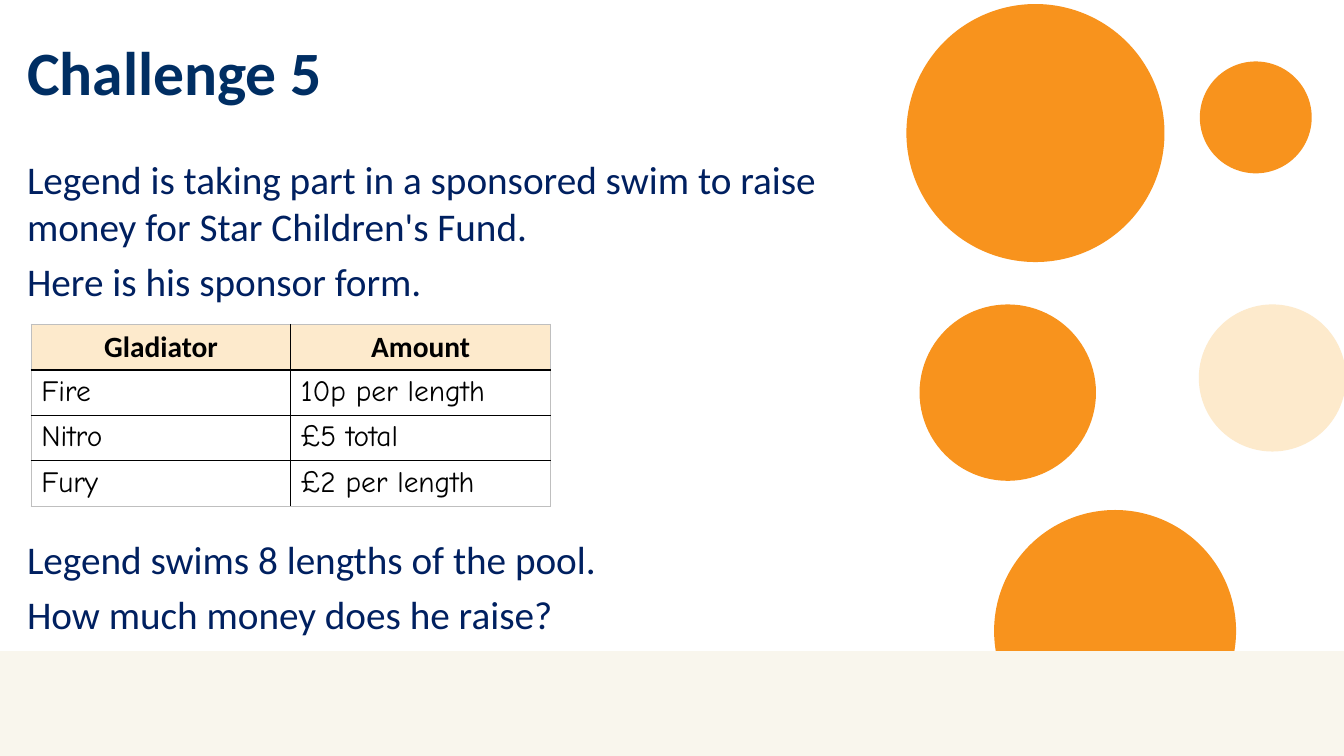
from lxml import etree
from pptx import Presentation
from pptx.dml.color import RGBColor
from pptx.enum import shapes, text
from pptx.oxml import ns
from pptx.util import Inches, Pt

# Content
TITLE = "Challenge 5"
INTRO = ["Legend is taking part in a sponsored swim to raise \vmoney for Star Children's Fund.",
         "Here is his sponsor form."]
QUESTION = ["Legend swims 8 lengths of the pool.", "How much money does he raise?"]
SPONSORS = [("Gladiator", "Amount"),
            ("Fire", "10p per length"),
            ("Nitro", "£5 total"),
            ("Fury", "£2 per length")]

# Colours
ORANGE = RGBColor(0xF8, 0x93, 0x1D)
PEACH = RGBColor(0xFD, 0xEA, 0xCC)
CREAM = RGBColor(0xF9, 0xF6, 0xED)
NAVY = RGBColor(0x00, 0x20, 0x60)
TITLE_NAVY = RGBColor(0x00, 0x2E, 0x63)
BLACK = RGBColor(0, 0, 0)
GREY = RGBColor(0xBF, 0xBF, 0xBF)

# Layout: circles are left, top, diameter, colour
CIRCLES = [(8.99, 0.04, 2.56, ORANGE), (9.12, 3.02, 1.75, ORANGE),
           (9.86, 5.06, 2.4, ORANGE), (11.9, 0.61, 1.11, ORANGE),
           (11.89, 3.02, 1.46, PEACH)]
WIDTH, HEIGHT = 13.33, 7.5
BAND_TOP = 6.46
TEXT_LEFT = 0.17
COL_W, ROW_H = 2.575, 0.45


def add_block(s, kind, left, top, width, height, colour):
    sp = s.shapes.add_shape(kind, Inches(left), Inches(top), Inches(width), Inches(height))
    sp.shadow.inherit = False
    sp.fill.solid()
    sp.fill.fore_color.rgb = colour
    sp.line.fill.background()


def style(p, size, colour, font="Calibri", bold=False):
    for r in p.runs:
        r.font.name, r.font.size, r.font.bold = font, Pt(size), bold
        r.font.color.rgb = colour


def add_text(s, top, width, height, lines, size, colour, bold=False, after=0):
    sp = s.shapes.add_textbox(Inches(TEXT_LEFT), Inches(top), Inches(width), Inches(height))
    tf = sp.text_frame
    tf.word_wrap = True
    tf.text = "\n".join(lines)
    for p in tf.paragraphs:
        p.space_after = Pt(after)
        style(p, size, colour, bold=bold)


def set_border(cell, index, side, colour, width):
    ln = etree.Element(ns.qn(f"a:ln{side}"), w=str(Pt(width)))
    fill = etree.SubElement(ln, ns.qn("a:solidFill"))
    etree.SubElement(fill, ns.qn("a:srgbClr"), val=str(colour))
    cell._tc.get_or_add_tcPr().insert(index, ln)


def add_sponsor_form(s, left, top):
    rows, cols = len(SPONSORS), len(SPONSORS[0])
    table = s.shapes.add_table(rows, cols, Inches(left), Inches(top),
                               Inches(cols * COL_W), Inches(rows * ROW_H)).table
    table.first_row = table.horz_banding = False
    for i, row in enumerate(SPONSORS):
        for j, label in enumerate(row):
            cell = table.cell(i, j)
            cell.text = label
            p = cell.text_frame.paragraphs[0]
            if i == 0:
                p.alignment = text.PP_ALIGN.CENTER
                cell.fill.solid()
                cell.fill.fore_color.rgb = PEACH
                style(p, 21, BLACK, bold=True)
            else:
                cell.fill.background()
                style(p, 21, BLACK, "Comic Neue")
            # Grey outer edges, black inner lines, heavier rule under the header
            outer = {"L": j == 0, "R": j == cols - 1, "T": i == 0, "B": i == rows - 1}
            for k, (side, is_outer) in enumerate(outer.items()):
                under_header = (i, side) in ((0, "B"), (1, "T"))
                set_border(cell, k, side, GREY if is_outer else BLACK,
                           1.5 if under_header else 1)


prs = Presentation()
prs.slide_width, prs.slide_height = Inches(WIDTH), Inches(HEIGHT)
s = prs.slides.add_slide(prs.slide_layouts[6])

# Background circles and bottom band
for left, top, size, colour in CIRCLES:
    add_block(s, shapes.MSO_SHAPE.OVAL, left, top, size, size, colour)
add_block(s, shapes.MSO_SHAPE.RECTANGLE, 0, BAND_TOP, WIDTH, HEIGHT - BAND_TOP, CREAM)

# Title, problem and sponsor form
add_text(s, 0.29, 3.66, 0.84, [TITLE], 44, TITLE_NAVY, bold=True)
add_text(s, 1.49, 8.7, 1.65, INTRO, 28, NAVY, after=6)
add_sponsor_form(s, 0.31, 3.22)
add_text(s, 5.26, 8.7, 1.16, QUESTION, 28, NAVY, after=6)

prs.save("out.pptx")
